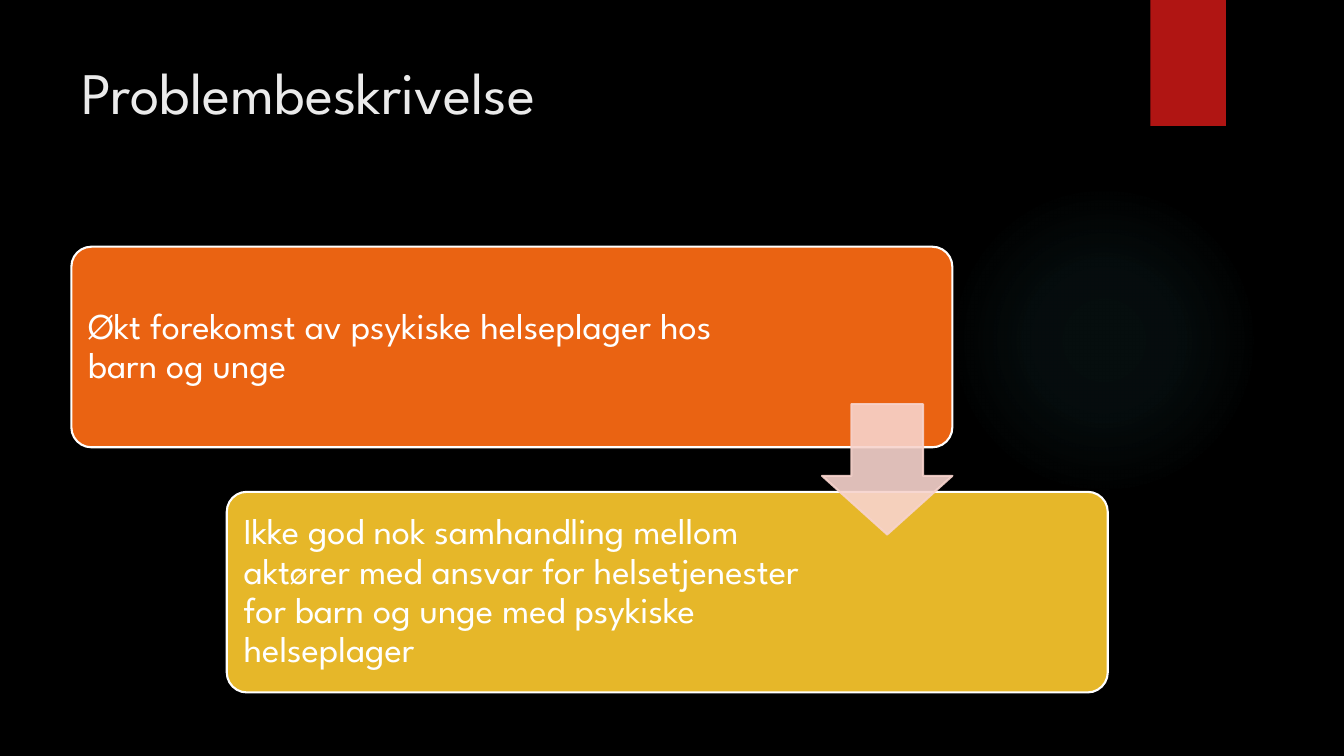
import pptx
import pptx.dml.color
import pptx.enum.shapes
import pptx.enum.text
import pptx.oxml
import pptx.oxml.ns
import pptx.util

Pt = pptx.util.Pt
SHAPE = pptx.enum.shapes.MSO_SHAPE
ANCHOR = pptx.enum.text.MSO_ANCHOR

COLORS = {
    "background": "000000",
    "title": "EBEBEB",
    "white": "FFFFFF",
    "red": "B01513",
    "orange": "EA6312",
    "yellow": "E6B729",
    "pink": "F7D3CC",
    "teal": "50B9C1",
}


def rgb(name):
    return pptx.dml.color.RGBColor.from_string(COLORS[name])


def write_text(tf, text, *, size, color, font, anchor, insets, line_spacing=None):
    """Fill a text frame with one left-aligned paragraph; insets are (horizontal, vertical)."""
    tf.word_wrap = True
    tf.auto_size = pptx.enum.text.MSO_AUTO_SIZE.NONE
    tf.vertical_anchor = anchor
    tf.margin_left = tf.margin_right = Pt(insets[0])
    tf.margin_top = tf.margin_bottom = Pt(insets[1])
    p = tf.paragraphs[0]
    p.alignment = pptx.enum.text.PP_ALIGN.LEFT
    p.line_spacing = line_spacing
    r = p.add_run()
    r.text = text
    r.font.size = Pt(size)
    r.font.name = font
    r.font.color.rgb = rgb(color)


class SlideBuilder:
    font = "League Spartan"
    line_width = 1.5

    def __init__(self, prs):
        self.slide = prs.slides.add_slide(prs.slide_layouts[5])
        fill = self.slide.background.fill
        fill.solid()
        fill.fore_color.rgb = rgb("background")

    def title(self, text, left, top, width, height):
        sp = self.slide.shapes.title
        sp.left, sp.top, sp.width, sp.height = map(Pt, (left, top, width, height))
        write_text(sp.text_frame, text, size=42, color="title", font=self.font,
                   anchor=ANCHOR.TOP, insets=(7.2, 3.6))

    def shape(self, kind, left, top, width, height, fill=None, line=None,
              adjustments=(), alpha=None):
        """Add a preset shape; alpha is the opacity of fill and line in percent."""
        sp = self.slide.shapes.add_shape(kind, *map(Pt, (left, top, width, height)))
        sp.shadow.inherit = False
        for i, value in enumerate(adjustments):
            sp.adjustments[i] = value
        if fill:
            sp.fill.solid()
            sp.fill.fore_color.rgb = rgb(fill)
        else:
            sp.fill.background()
        if line:
            sp.line.color.rgb = rgb(line)
            sp.line.width = Pt(self.line_width)
        else:
            sp.line.fill.background()
        if alpha is not None:
            for clr in sp._element.spPr.iter(pptx.oxml.ns.qn("a:srgbClr")):
                clr.append(pptx.oxml.parse_xml(
                    f'<a:alpha {pptx.oxml.ns.nsdecls("a")} val="{alpha * 1000}"/>'))
        return sp

    def glow(self, left, top, size, color, stops):
        """Add a circle with a radial fade; stops are (position, opacity) in percent."""
        sp = self.shape(SHAPE.OVAL, left, top, size, size)
        stop_xml = "".join(
            f'<a:gs pos="{pos * 1000}"><a:srgbClr val="{COLORS[color]}">'
            f'<a:alpha val="{alpha * 1000}"/></a:srgbClr></a:gs>'
            for pos, alpha in stops)
        gradient = pptx.oxml.parse_xml(
            f'<a:gradFill {pptx.oxml.ns.nsdecls("a")}><a:gsLst>{stop_xml}</a:gsLst>'
            '<a:path path="circle"><a:fillToRect l="50000" t="50000" r="50000" b="50000"/>'
            '</a:path></a:gradFill>')
        spPr = sp._element.spPr
        spPr.replace(spPr.find(pptx.oxml.ns.qn("a:noFill")), gradient)

    def card(self, text, left, top, width, height, fill, text_width):
        self.shape(SHAPE.ROUNDED_RECTANGLE, left, top, width, height,
                   fill, "white", adjustments=[0.1])
        pad = 4.2
        box = self.slide.shapes.add_textbox(
            *map(Pt, (left + pad, top + pad, text_width, height - 2 * pad)))
        write_text(box.text_frame, text, size=26, color="white", font=self.font,
                   anchor=ANCHOR.MIDDLE, insets=(7.8, 7.8), line_spacing=0.9)


def main():
    prs = pptx.Presentation()
    prs.slide_width, prs.slide_height = Pt(960), Pt(540)

    s = SlideBuilder(prs)
    s.glow(677.5, 131.8, 221.8, "teal", [(0, 7), (36, 6), (69, 0)])
    s.shape(SHAPE.RECTANGLE, 821.7, 0, 54, 90, "red")
    s.title("Problembeskrivelse", 51, 36, 741, 110)

    left, top, width, height = 51, 176.2, 629.3, 143.3
    step_x, step_y = 111, 175.1
    cards = [
        ("Økt forekomst av psykiske helseplager hos barn og unge", "orange", 481),
        ("Ikke god nok samhandling mellom aktører med ansvar for helsetjenester "
         "for barn og unge med psykiske helseplager", "yellow", 417),
    ]
    for i, (text, fill, text_width) in enumerate(cards):
        s.card(text, left + i * step_x, top + i * step_y, width, height, fill, text_width)

    arrow = 93.1
    s.shape(SHAPE.DOWN_ARROW, left + width - arrow, 288.7, arrow, arrow,
            "pink", "pink", adjustments=[0.55, 0.45], alpha=90)

    prs.save("out.pptx")


if __name__ == "__main__":
    main()
